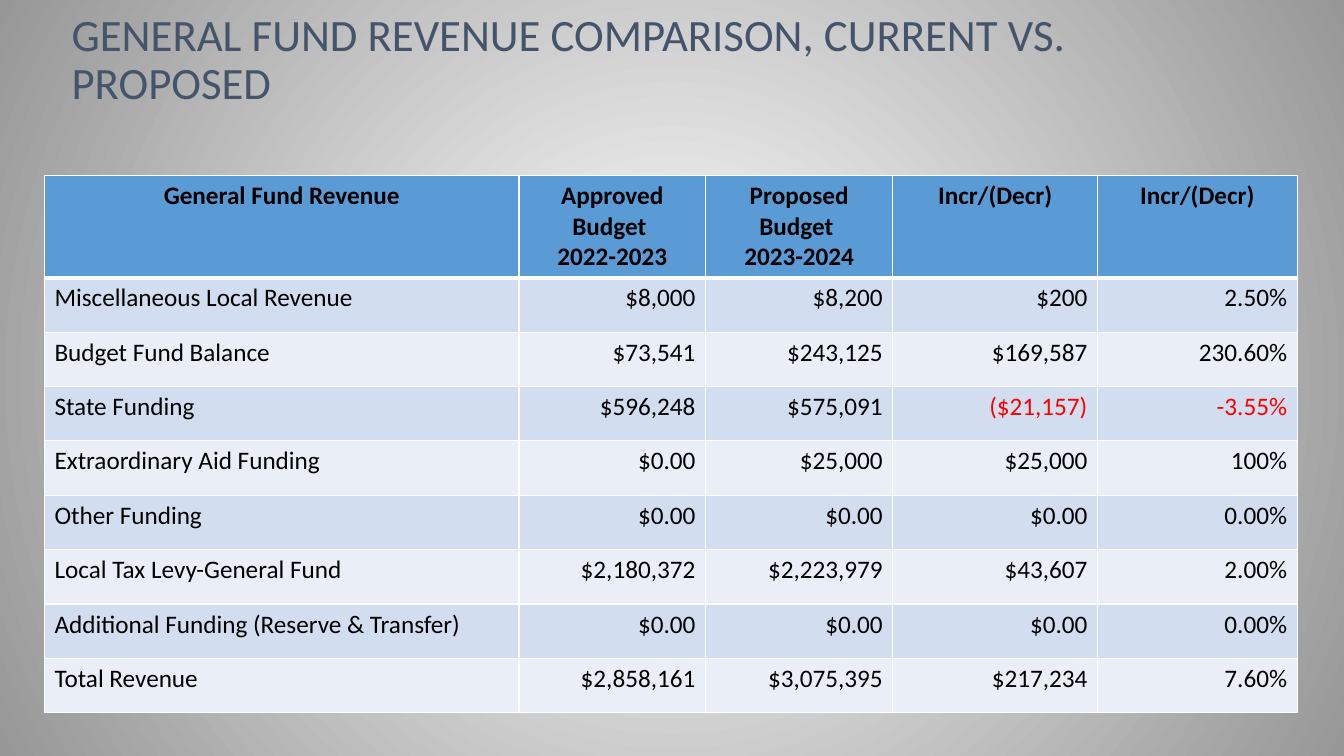
from lxml.etree import SubElement
from pptx import Presentation
from pptx.dml.color import RGBColor
from pptx.enum.text import MSO_ANCHOR, MSO_AUTO_SIZE, PP_ALIGN
from pptx.oxml.ns import qn
from pptx.util import Cm, Pt


def color(hex_string):
    return RGBColor.from_string(hex_string)


def add_border(cell, side, points):
    line = SubElement(cell._tc.get_or_add_tcPr(), qn(f"a:{side}"), w=str(Pt(points)))
    SubElement(SubElement(line, qn("a:solidFill")), qn("a:srgbClr"), val="FFFFFF")


presentation = Presentation()
presentation.slide_width = Cm(33.87)
presentation.slide_height = Cm(19.05)
slide = presentation.slides.add_slide(presentation.slide_layouts[5])

# Background: circular gradient from the centre
background = slide.background.fill
background.gradient()
for stop, shade in zip(background.gradient_stops, ("FFFFFF", "979797")):
    stop.color.rgb = color(shade)
gradient = slide._element.find(".//" + qn("a:gradFill"))
gradient.remove(gradient.find(qn("a:lin")))
circle = SubElement(gradient, qn("a:path"), {"path": "circle"})
SubElement(circle, qn("a:fillToRect"), {side: "50000" for side in "ltrb"})

# Title: bottom-anchored, its two lines grow upwards
title = slide.shapes.title
title.left, title.top, title.width, title.height = Cm(1.55), Cm(2.64), Cm(29.67), Cm(0.23)
title.text_frame.text = "GENERAL FUND REVENUE COMPARISON, CURRENT VS. PROPOSED"
title.text_frame.word_wrap = True
title.text_frame.auto_size = MSO_AUTO_SIZE.NONE
title.text_frame.vertical_anchor = MSO_ANCHOR.BOTTOM
heading = title.text_frame.paragraphs[0]
heading.alignment = PP_ALIGN.LEFT
heading.line_spacing = 0.9
heading_font = heading.runs[0].font
heading_font.name = "Calibri"
heading_font.size = Pt(32)
heading_font.color.rgb = color("44546A")

# Revenue table
revenue = [
    ("General Fund Revenue", "Approved Budget \n2022-2023", "Proposed Budget \n2023-2024",
     "Incr/(Decr)", "Incr/(Decr)"),
    ("Miscellaneous Local Revenue", "$8,000", "$8,200", "$200", "2.50%"),
    ("Budget Fund Balance", "$73,541", "$243,125", "$169,587", "230.60%"),
    ("State Funding", "$596,248", "$575,091", "($21,157)", "-3.55%"),
    ("Extraordinary Aid Funding", "$0.00", "$25,000", "$25,000", "100%"),
    ("Other Funding", "$0.00", "$0.00", "$0.00", "0.00%"),
    ("Local Tax Levy-General Fund", "$2,180,372", "$2,223,979", "$43,607", "2.00%"),
    ("Additional Funding (Reserve & Transfer)", "$0.00", "$0.00", "$0.00", "0.00%"),
    ("Total Revenue", "$2,858,161", "$3,075,395", "$217,234", "7.60%"),
]
column_widths = (11.96, 4.7, 4.72, 5.16, 5.03)
header_height, body_height = 2.54, 1.37
table = slide.shapes.add_table(
    len(revenue), len(column_widths), Cm(1.12), Cm(4.42), Cm(sum(column_widths)),
    Cm(header_height + body_height * (len(revenue) - 1))).table
for column, width in zip(table.columns, column_widths):
    column.width = Cm(width)

for row_number, entries in enumerate(revenue):
    is_header = row_number == 0
    table.rows[row_number].height = Cm(header_height if is_header else body_height)
    if is_header:
        band = "5B9BD5"
    else:
        band = "D2DEEF" if row_number % 2 else "EAEFF7"

    for column_number, entry in enumerate(entries):
        cell = table.cell(row_number, column_number)
        for side in ("lnL", "lnR", "lnT", "lnB"):
            heavy = (is_header and side == "lnB") or (row_number == 1 and side == "lnT")
            add_border(cell, side, 3 if heavy else 1)
        cell.fill.solid()
        cell.fill.fore_color.rgb = color(band)

        if is_header:
            alignment = PP_ALIGN.CENTER
        else:
            alignment = PP_ALIGN.RIGHT if column_number else PP_ALIGN.LEFT
        is_decrease = entry.startswith(("(", "-"))
        cell.text_frame.text = entry
        for paragraph in cell.text_frame.paragraphs:
            paragraph.alignment = alignment
            font = paragraph.runs[0].font
            font.name = "Calibri"
            font.size = Pt(18)
            font.bold = is_header
            font.color.rgb = color("FF0000" if is_decrease else "000000")

presentation.save("out.pptx")
